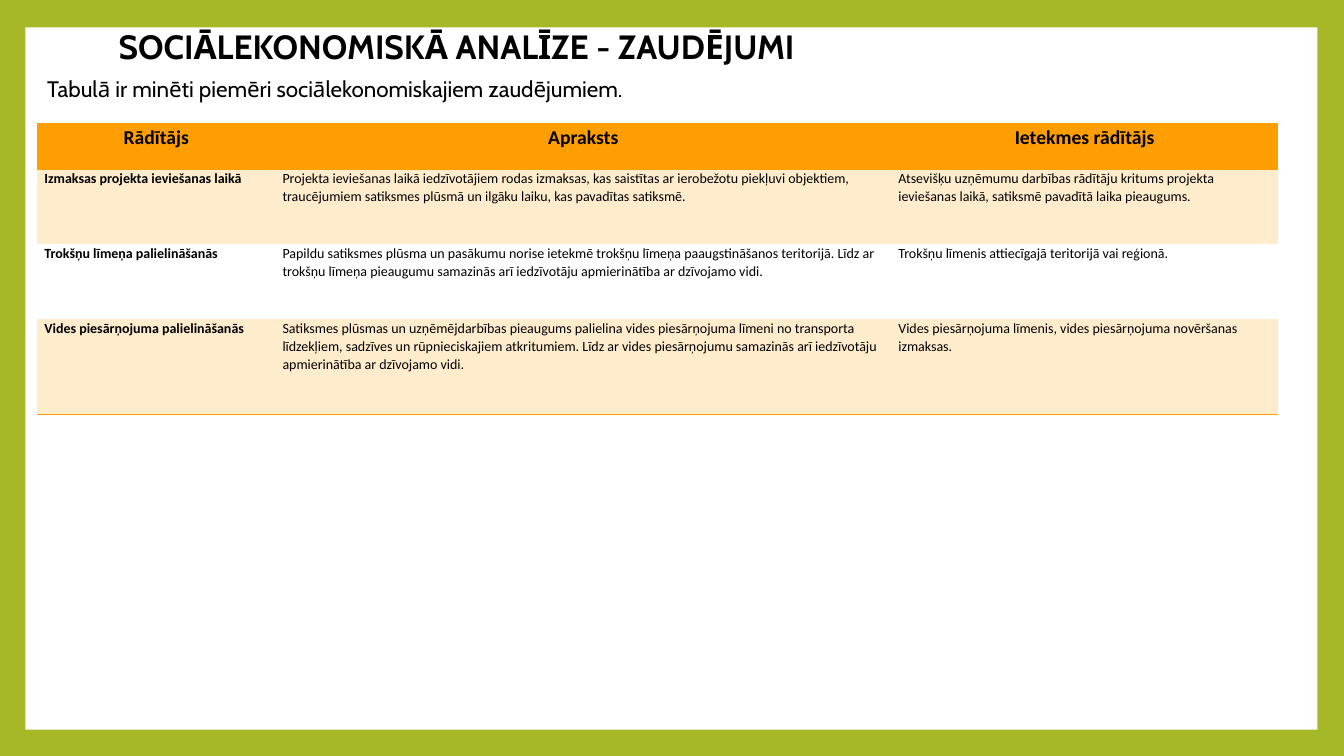
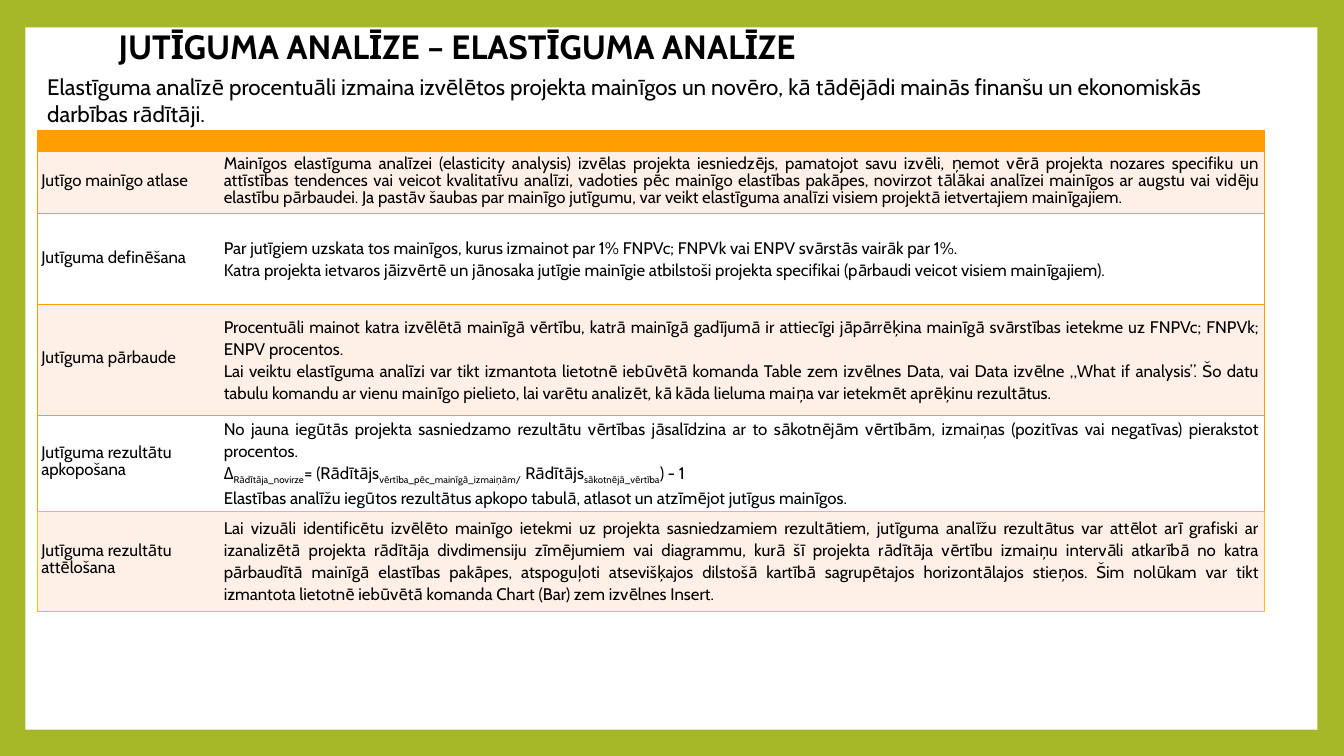
from lxml import etree
from pptx import Presentation
from pptx.dml.color import RGBColor
from pptx.enum.shapes import MSO_SHAPE
from pptx.enum.text import MSO_ANCHOR, PP_ALIGN
from pptx.oxml import ns
from pptx.util import Cm, Pt

GREEN = RGBColor(0xA6, 0xB7, 0x27)
WHITE = RGBColor(0xFF, 0xFF, 0xFF)
BLACK = RGBColor(0x00, 0x00, 0x00)
ORANGE = RGBColor(0xFE, 0x9E, 0x00)
AMBER = RGBColor(0xFF, 0xC0, 0x00)
CREAM = RGBColor(0xFF, 0xEC, 0xCC)
PEACH = RGBColor(0xFF, 0xF0, 0xE7)

HEADING_FONT = "Cabin"
TABLE_FONT = "Calibri"
NO_GRID_STYLE = "{2D5ABB26-0587-4C30-8999-92F81FD0307C}"
CELL_SPACING = 1.07
LABEL_SPACING = Pt(12)

LOSSES_HEADER = ["Rādītājs", "Apraksts", "Ietekmes rādītājs"]
LOSSES = [
    ["Izmaksas projekta ieviešanas laikā",
     "Projekta ieviešanas laikā iedzīvotājiem rodas izmaksas, kas saistītas ar ierobežotu piekļuvi "
     "objektiem, traucējumiem satiksmes plūsmā un ilgāku laiku, kas pavadītas satiksmē.",
     "Atsevišķu uzņēmumu darbības rādītāju kritums projekta ieviešanas laikā, satiksmē pavadītā "
     "laika pieaugums."],
    ["Trokšņu līmeņa palielināšanās",
     "Papildu satiksmes plūsma un pasākumu norise ietekmē trokšņu līmeņa paaugstināšanos teritorijā. "
     "Līdz ar trokšņu līmeņa pieaugumu samazinās arī iedzīvotāju apmierinātība ar dzīvojamo vidi.",
     "Trokšņu līmenis attiecīgajā teritorijā vai reģionā."],
    ["Vides piesārņojuma palielināšanās",
     "Satiksmes plūsmas un uzņēmējdarbības pieaugums palielina vides piesārņojuma līmeni no "
     "transporta līdzekļiem, sadzīves un rūpnieciskajiem atkritumiem. Līdz ar vides piesārņojumu "
     "samazinās arī iedzīvotāju apmierinātība ar dzīvojamo vidi.",
     "Vides piesārņojuma līmenis, vides piesārņojuma novēršanas izmaksas."],
]

FORMULA = ["Δ", "Rādītāja_novirze", "= (Rādītājs", "vērtība_pēc_mainīgā_izmaiņām/",
           " Rādītājs", "sākotnējā_vērtība", ") - 1"]
ELASTICITY = [
    ("Jutīgo mainīgo atlase", [[
        "Mainīgos elastīguma analīzei (elasticity analysis) izvēlas projekta iesniedzējs, pamatojot "
        "savu izvēli, ņemot vērā projekta nozares specifiku un attīstības tendences vai veicot "
        "kvalitatīvu analīzi, vadoties pēc mainīgo elastības pakāpes, novirzot tālākai analīzei "
        "mainīgos ar augstu vai vidēju elastību pārbaudei. Ja pastāv šaubas par mainīgo jutīgumu, "
        "var veikt elastīguma analīzi visiem projektā ietvertajiem mainīgajiem."]]),
    ("Jutīguma definēšana", [
        ["Par jutīgiem uzskata tos mainīgos, kurus izmainot par 1% FNPVc; FNPVk vai ENPV svārstās "
         "vairāk par 1%."],
        ["Katra projekta ietvaros jāizvērtē un jānosaka jutīgie mainīgie atbilstoši projekta "
         "specifikai (pārbaudi veicot visiem mainīgajiem)."]]),
    ("Jutīguma pārbaude", [
        ["Procentuāli mainot katra izvēlētā mainīgā vērtību, katrā mainīgā gadījumā ir attiecīgi "
         "jāpārrēķina mainīgā svārstības ietekme uz FNPVc; FNPVk; ENPV procentos."],
        ["Lai veiktu elastīguma analīzi var tikt izmantota lietotnē iebūvētā komanda Table zem "
         "izvēlnes Data, vai Data izvēlne „What if analysis”. Šo datu tabulu komandu ar vienu "
         "mainīgo pielieto, lai varētu analizēt, kā kāda lieluma maiņa var ietekmēt aprēķinu "
         "rezultātus."]]),
    ("Jutīguma rezultātu apkopošana", [
        ["No jauna iegūtās projekta sasniedzamo rezultātu vērtības jāsalīdzina ar to sākotnējām "
         "vērtībām, izmaiņas (pozitīvas vai negatīvas) pierakstot procentos."],
        FORMULA,
        ["Elastības analīžu iegūtos rezultātus apkopo tabulā, atlasot un atzīmējot jutīgus "
         "mainīgos."]]),
    ("Jutīguma rezultātu attēlošana", [[
        "Lai vizuāli identificētu izvēlēto mainīgo ietekmi uz projekta sasniedzamiem rezultātiem, "
        "jutīguma analīžu rezultātus var attēlot arī grafiski ar izanalizētā projekta rādītāja "
        "divdimensiju zīmējumiem vai diagrammu, kurā šī projekta rādītāja vērtību izmaiņu intervāli "
        "atkarībā no katra pārbaudītā mainīgā elastības pakāpes, atspoguļoti atsevišķajos dilstošā "
        "kartībā sagrupētajos horizontālajos stieņos. Šim nolūkam var tikt izmantota lietotnē "
        "iebūvētā komanda Chart (Bar) zem izvēlnes Insert."]]),
]


def add_span(para, content, font, size, bold=False, subscript=False):
    span = para.add_run()
    span.text = content
    span.font.name = font
    span.font.size = Pt(size)
    span.font.bold = bold
    span.font.color.rgb = BLACK
    if subscript:
        span._r.get_or_add_rPr().set("baseline", "-25000")


def add_text(page, left, top, width, height, content, size, bold=False,
             anchor=MSO_ANCHOR.TOP, spacing=1.0):
    box = page.shapes.add_textbox(Cm(left), Cm(top), Cm(width), Cm(height))
    frame = box.text_frame
    frame.word_wrap = True
    frame.vertical_anchor = anchor
    para = frame.paragraphs[0]
    para.line_spacing = spacing
    add_span(para, content, HEADING_FONT, size, bold)


def add_page(deck, title, intro, intro_top):
    page = deck.slides.add_slide(deck.slide_layouts[6])
    panel = page.shapes.add_shape(MSO_SHAPE.RECTANGLE, Cm(0.64), Cm(0.69), Cm(32.56), Cm(17.7))
    panel.shadow.inherit = False
    panel.fill.solid()
    panel.fill.fore_color.rgb = WHITE
    panel.line.fill.background()
    add_text(page, 2.74, 0.69, 29.46, 1.09, title, 24, True, MSO_ANCHOR.MIDDLE, 0.9)
    add_text(page, 0.94, intro_top, 30.94, 1.63, intro, 16)
    return page


def add_grid(page, top, widths, heights):
    frame = page.shapes.add_table(len(heights), len(widths), Cm(0.94), Cm(top),
                                  Cm(sum(widths)), Cm(sum(heights)))
    table = frame.table
    table.first_row = False
    table.horz_banding = False
    table._tbl.tblPr.find(ns.qn("a:tableStyleId")).text = NO_GRID_STYLE
    for column, width in zip(table.columns, widths):
        column.width = Cm(width)
    for row, height in zip(table.rows, heights):
        row.height = Cm(height)
    return table


def style_cell(cell, fill, inset, borders, anchor=MSO_ANCHOR.TOP):
    cell.margin_left = cell.margin_right = Cm(inset)
    cell.margin_top = cell.margin_bottom = 0
    cell.vertical_anchor = anchor
    properties = cell._tc.get_or_add_tcPr()
    for side in "LRTB":
        if side in borders:
            line = etree.SubElement(properties, ns.qn("a:ln" + side), w=str(Pt(1)))
            solid = etree.SubElement(line, ns.qn("a:solidFill"))
            etree.SubElement(solid, ns.qn("a:srgbClr"), val=str(borders[side]))
    cell.fill.solid()
    cell.fill.fore_color.rgb = fill


def write_cell(cell, paragraphs, font, size, bold=False, align=PP_ALIGN.LEFT,
               spacing=CELL_SPACING):
    frame = cell.text_frame
    for index, spans in enumerate(paragraphs):
        para = frame.add_paragraph() if index else frame.paragraphs[0]
        para.alignment = align
        para.line_spacing = spacing
        for position, content in enumerate(spans):
            add_span(para, content, font, size, bold, subscript=position % 2 == 1)


def shrink_empty_cell(cell, size):
    para = cell.text_frame.paragraphs[0]
    etree.SubElement(para._p, ns.qn("a:endParaRPr"), sz=str(size * 100))


def add_losses_table(page):
    table = add_grid(page, 3.12, [6, 15.52, 9.75], [1.15, 1.88, 1.88, 2.42])
    for column, heading in enumerate(LOSSES_HEADER):
        cell = table.cell(0, column)
        style_cell(cell, ORANGE, 0.18, {"T": ORANGE, "B": ORANGE})
        write_cell(cell, [[heading]], TABLE_FONT, 14, True, PP_ALIGN.CENTER)
    for row, entries in enumerate(LOSSES, 1):
        borders = {"B": ORANGE} if row == len(LOSSES) else {}
        for column, content in enumerate(entries):
            cell = table.cell(row, column)
            style_cell(cell, CREAM if row % 2 else WHITE, 0.18, borders)
            write_cell(cell, [[content]], TABLE_FONT, 10, bold=column == 0)


def add_elasticity_table(page):
    table = add_grid(page, 3.28, [4.6, 26.32], [0.53, 1.57, 2.29, 2.79, 2.42, 2.52])
    lines = [ORANGE] * 5 + [AMBER] * 2
    for row in range(len(ELASTICITY) + 1):
        fill = PEACH if row % 2 else WHITE
        for column, side in enumerate("LR"):
            borders = {side: lines[row], "T": lines[row], "B": lines[row + 1]}
            style_cell(table.cell(row, column), fill if row else ORANGE, 0.1, borders,
                       MSO_ANCHOR.MIDDLE)
    for column in range(2):
        shrink_empty_cell(table.cell(0, column), 10)
    for row, (label, paragraphs) in enumerate(ELASTICITY, 1):
        write_cell(table.cell(row, 0), [[label]], HEADING_FONT, 12, spacing=LABEL_SPACING)
        write_cell(table.cell(row, 1), paragraphs, HEADING_FONT, 12, align=PP_ALIGN.JUSTIFY,
                   spacing=LABEL_SPACING if row == 1 else CELL_SPACING)


def main():
    deck = Presentation()
    deck.slide_width = Cm(33.87)
    deck.slide_height = Cm(19.05)
    background = deck.slide_master.background.fill
    background.solid()
    background.fore_color.rgb = GREEN

    losses = add_page(deck, "SOCIĀLEKONOMISKĀ ANALĪZE - ZAUDĒJUMI",
                      "Tabulā ir minēti piemēri sociālekonomiskajiem zaudējumiem.", 1.78)
    add_losses_table(losses)

    elasticity = add_page(deck, "JUTĪGUMA ANALĪZE – ELASTĪGUMA ANALĪZE",
                          "Elastīguma analīzē procentuāli izmaina izvēlētos projekta mainīgos un "
                          "novēro, kā tādējādi mainās finanšu un ekonomiskās darbības rādītāji.", 1.73)
    add_elasticity_table(elasticity)
    deck.save("out.pptx")


if __name__ == "__main__":
    main()
